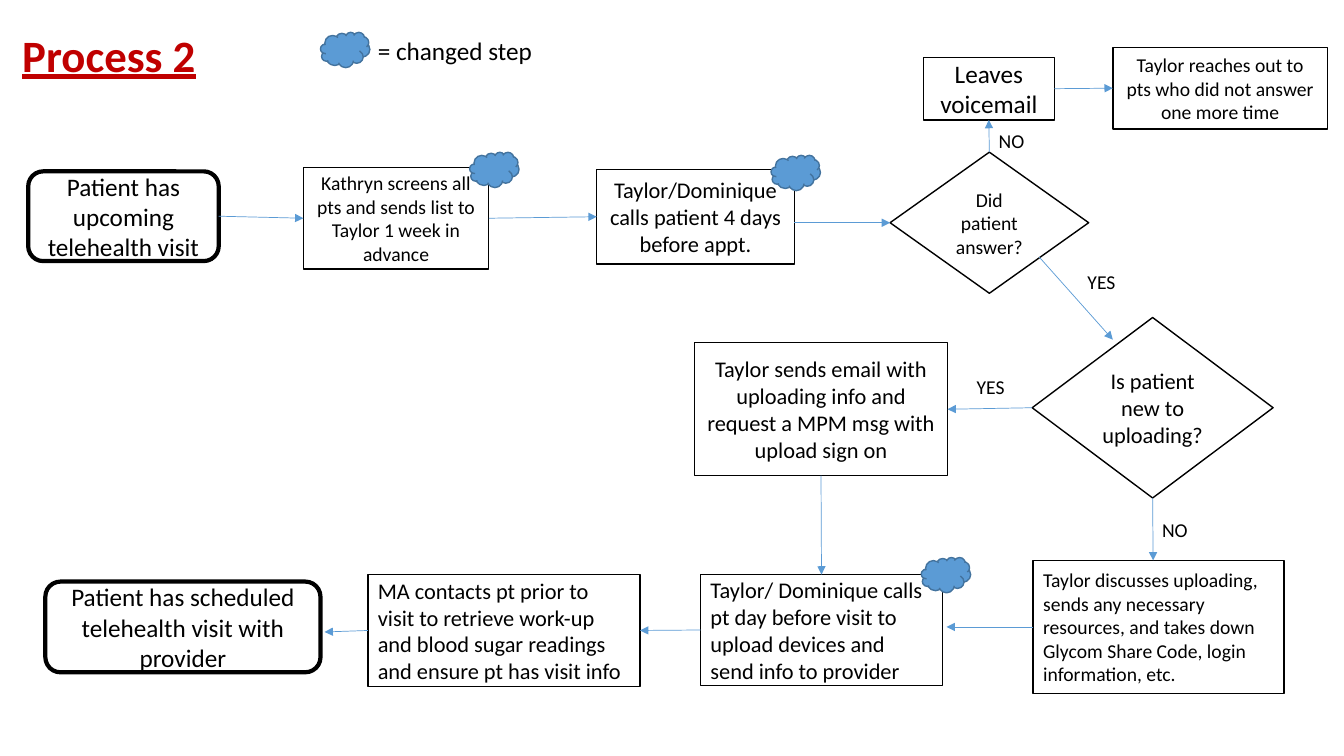
from lxml import etree
from pptx import Presentation
from pptx.dml.color import RGBColor
from pptx.enum.shapes import MSO_CONNECTOR, MSO_SHAPE
from pptx.enum.text import MSO_ANCHOR, MSO_AUTO_SIZE, PP_ALIGN
from pptx.oxml.ns import qn
from pptx.util import Inches, Pt

RECT, ROUNDED = MSO_SHAPE.RECTANGLE, MSO_SHAPE.ROUNDED_RECTANGLE
DIAMOND, CLOUD = MSO_SHAPE.DIAMOND, MSO_SHAPE.CLOUD
STRAIGHT = MSO_CONNECTOR.STRAIGHT
LEFT_ALIGN, CENTER = PP_ALIGN.LEFT, PP_ALIGN.CENTER
TOP_ANCHOR, MIDDLE = MSO_ANCHOR.TOP, MSO_ANCHOR.MIDDLE
NO_FIT = MSO_AUTO_SIZE.NONE
TOP, LEFT, BOTTOM, RIGHT = range(4)

COLORS = {"ink": "000000", "paper": "FFFFFF", "title": "C00000",
          "accent": "5B9BD5", "accent_edge": "43739E"}
FONT = "Calibri"
COLUMNS, ROWS = 40, 22.5
TITLE_ONLY = 5


def rgb(name):
    return RGBColor.from_string(COLORS[name])


class Flowchart:
    def __init__(self, deck):
        self.column = deck.slide_width / COLUMNS
        self.row = deck.slide_height / ROWS
        self.slide = deck.slides.add_slide(deck.slide_layouts[TITLE_ONLY])
        self.shapes = self.slide.shapes

    def place(self, x, y, *size):
        scaled = [round(x * self.column), round(y * self.row)]
        if size:
            scaled += [round(size[0] * self.column), round(size[1] * self.row)]
        return scaled

    def set_text(self, shape, text, size, align, anchor, color="ink"):
        frame = shape.text_frame
        frame.text = text
        frame.word_wrap = True
        frame.auto_size = NO_FIT
        frame.vertical_anchor = anchor
        paragraph = frame.paragraphs[0]
        paragraph.alignment = align
        font = paragraph.runs[0].font
        font.name, font.size = FONT, Pt(size)
        font.color.rgb = rgb(color)
        return font

    def title(self, box, text):
        heading = self.shapes.title
        heading.left, heading.top, heading.width, heading.height = self.place(*box)
        font = self.set_text(heading, text, 32, LEFT_ALIGN, TOP_ANCHOR, "title")
        font.bold = font.underline = True

    def label(self, box, text, size=14):
        caption = self.shapes.add_textbox(*self.place(*box))
        self.set_text(caption, text, size, LEFT_ALIGN, TOP_ANCHOR)

    def outline(self, kind, box, fill, edge, weight):
        shape = self.shapes.add_shape(kind, *self.place(*box))
        shape.shadow.inherit = False
        shape.fill.solid()
        shape.fill.fore_color.rgb = rgb(fill)
        shape.line.color.rgb = rgb(edge)
        shape.line.width = Pt(weight)
        return shape

    def step(self, box, text, size, kind=RECT, align=CENTER):
        weight = 3 if kind == ROUNDED else 1
        shape = self.outline(kind, box, "paper", "ink", weight)
        self.set_text(shape, text, size, align, MIDDLE)
        return shape

    def changed(self, x, y):
        self.outline(CLOUD, (x, y, 1.47, 1.05), "accent", "accent_edge", 1)

    def arrow(self, start, end):
        joined = [not isinstance(tip[0], (int, float)) for tip in (start, end)]
        points = [(0, 0) if is_joined else self.place(*tip)
                  for is_joined, tip in zip(joined, (start, end))]
        link = self.shapes.add_connector(STRAIGHT, *points[0], *points[1])
        if joined[0]:
            link.begin_connect(*start)
        if joined[1]:
            link.end_connect(*end)
        link.line.color.rgb = rgb("accent")
        link.line.width = Pt(0.5)
        properties = link.element.spPr
        etree.SubElement(properties.find(qn("a:ln")), qn("a:tailEnd"), type="triangle")
        etree.SubElement(properties, qn("a:effectLst"))


def main():
    deck = Presentation()
    deck.slide_width, deck.slide_height = Inches(13.33), Inches(7.5)
    chart = Flowchart(deck)
    chart.title((0.36, 0.66, 9.18, 1.92), "Process 2")

    upcoming = chart.step((0.84, 5.1, 5.67, 2.67),
                          "Patient has upcoming telehealth visit", 18, ROUNDED)
    screening = chart.step((9.03, 4.98, 5.52, 3.03),
                           "Kathryn screens all pts and sends list to Taylor 1 week in advance", 14)
    first_call = chart.step((17.76, 5.04, 5.88, 2.82),
                            "Taylor/Dominique calls patient 4 days before appt.", 16)
    answered = chart.step((26.49, 4.53, 5.91, 4.2), "Did patient answer?", 14, DIAMOND)
    voicemail = chart.step((27.48, 1.71, 3.9, 1.86), "Leaves voicemail", 18)
    retry = chart.step((33.12, 1.41, 6.39, 2.43),
                       "Taylor reaches out to pts who did not answer one more time", 14)
    new_uploader = chart.step((30.72, 9.45, 7.17, 5.37),
                              "Is patient new to uploading?", 16, DIAMOND)
    email = chart.step((20.67, 10.2, 7.53, 3.96),
                       "Taylor sends email with uploading info and request a MPM msg with upload sign on", 16)
    discussion = chart.step((30.75, 16.68, 7.47, 3.96),
                            "Taylor discusses uploading, sends any necessary resources, and takes down "
                            "Glycom Share Code, login information, etc.", 14, align=LEFT_ALIGN)
    second_call = chart.step((20.85, 17.1, 7.2, 3.3),
                             "Taylor/ Dominique calls pt day before visit to upload devices "
                             "and send info to provider", 16, align=LEFT_ALIGN)
    preparation = chart.step((10.95, 17.1, 8.1, 3.33),
                             "MA contacts pt prior to visit to retrieve work-up and blood sugar readings "
                             "and ensure pt has visit info", 16, align=LEFT_ALIGN)
    chart.step((1.35, 17.31, 8.19, 2.7),
               "Patient has scheduled telehealth visit with provider", 18, ROUNDED)

    for start, end in [
        ((upcoming, RIGHT), (screening, LEFT)),
        ((screening, RIGHT), (first_call, LEFT)),
        ((23.64, 6.63), (answered, LEFT)),
        ((answered, TOP), (voicemail, BOTTOM)),
        ((voicemail, RIGHT), (retry, LEFT)),
        ((30.93, 7.65), (33.12, 10.11)),
        ((new_uploader, LEFT), (email, RIGHT)),
        ((new_uploader, BOTTOM), (34.32, 16.68)),
        ((email, BOTTOM), (second_call, TOP)),
        ((discussion, LEFT), (28.17, 18.66)),
        ((second_call, LEFT), (preparation, RIGHT)),
        ((preparation, LEFT), (9.66, 18.81)),
    ]:
        chart.arrow(start, end)

    for x, y, width, answer in [(28.77, 11.01, 1.95, "YES"), (32.07, 7.89, 1.95, "YES"),
                                (34.29, 15.27, 1.47, "NO"), (29.43, 3.69, 1.47, "NO")]:
        chart.label((x, y, width, 1.02), answer)

    for x, y in [(13.98, 4.53), (22.95, 4.62), (27.42, 16.59), (9.54, 0.96)]:
        chart.changed(x, y)
    chart.label((10.95, 0.9, 5.52, 1.2), "= changed step", 18)

    deck.save("out.pptx")


if __name__ == "__main__":
    main()
